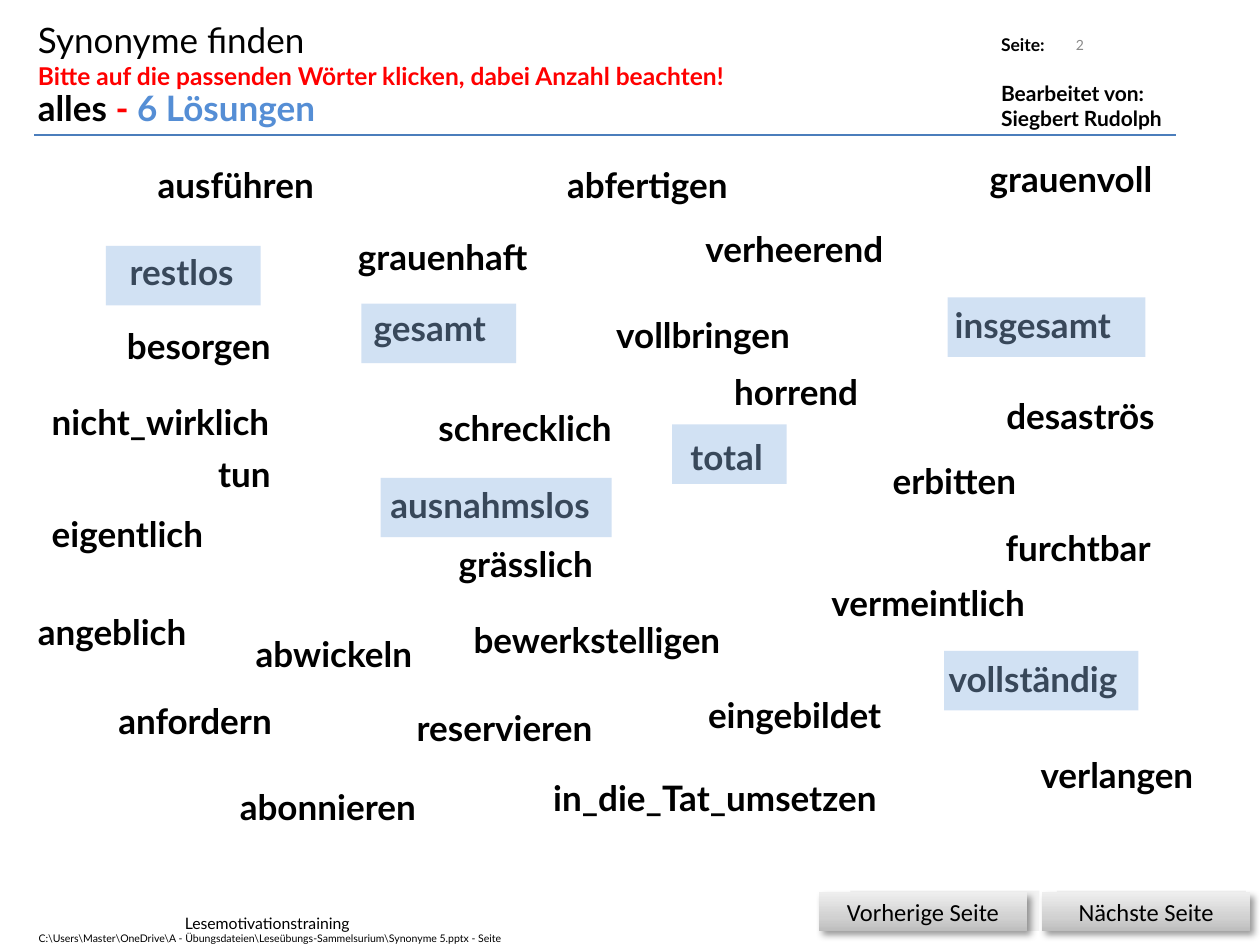
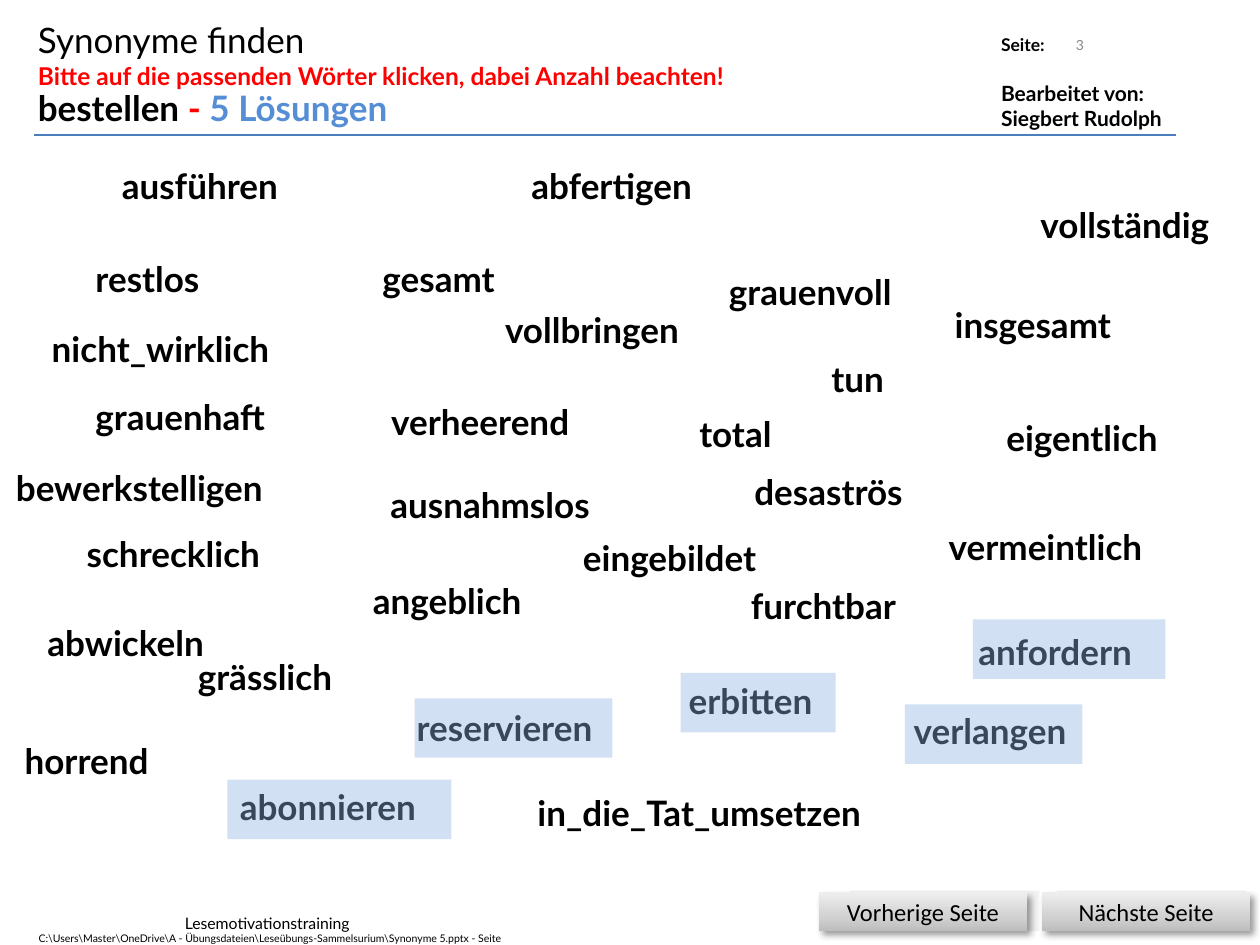
"""Builds two synonym exercise slides with their solution words highlighted."""
from dataclasses import dataclass

from lxml.etree import SubElement
from pptx import Presentation
from pptx.dml.color import RGBColor as RGB
from pptx.enum.shapes import MSO_CONNECTOR as CONN, MSO_SHAPE as SHAPE
from pptx.enum.text import MSO_ANCHOR as ANCHOR, MSO_AUTO_SIZE as FIT, PP_ALIGN as ALIGN
from pptx.oxml import parse_xml
from pptx.oxml.ns import nsdecls, qn
from pptx.util import Pt


@dataclass(frozen=True)
class Theme:
    font: str = "Lato"
    button_font: str = "Calibri"
    black: str = "000000"
    white: str = "FFFFFF"
    red: str = "FF0000"
    blue: str = "558ED5"
    rule: str = "4B7EBC"
    grey: str = "898989"
    plate: str = "F2F2F2"
    highlight: str = "8EB4E3"
    gradient: tuple = ((0, "BDBDBD"), (35, "D1D1D1"), (100, "EEEEEE"))
    word: int = 20
    hint: int = 14
    author: int = 12
    label: int = 10
    footer: int = 9
    number: int = 8
    file: int = 6


T = Theme()
WORD_H = 31.5
HIGHLIGHT_H = 34
FILE_NAME = r"C:\Users\Master\OneDrive\A - Übungsdateien\Leseübungs-Sammelsurium\Synonyme 5.pptx - Seite"
BUTTONS = [("Nächste Seite", 595.5, 604), ("Vorherige Seite", 468, 486)]

WIDTHS = {
    "insgesamt": 108, "total": 58, "vollständig": 116, "ausnahmslos": 132.5,
    "restlos": 78, "gesamt": 81, "verlangen": 107, "erbitten": 92,
    "abonnieren": 122, "reservieren": 125, "anfordern": 109, "grauenvoll": 113,
    "verheerend": 125, "furchtbar": 104, "horrend": 91, "schrecklich": 122,
    "grässlich": 96, "desaströs": 103, "grauenhaft": 117, "abfertigen": 112,
    "besorgen": 100, "vollbringen": 120, "tun": 46, "abwickeln": 109,
    "in_die_Tat_umsetzen": 218, "bewerkstelligen": 165, "ausführen": 109,
    "eigentlich": 108, "angeblich": 105, "eingebildet": 121,
    "vermeintlich": 135, "nicht_wirklich": 150,
}

EXERCISES = [
    {
        "page": 2, "keyword": "alles", "solutions": 6, "width": 183,
        "words": [
            ("insgesamt", 538.5, 170), ("total", 387.5, 245.5), ("vollständig", 535, 372),
            ("ausnahmslos", 216, 273), ("restlos", 67, 139.5), ("gesamt", 206.5, 171.5),
            ("verlangen", 587.5, 427), ("erbitten", 503, 259), ("abonnieren", 130, 445.5),
            ("reservieren", 231, 400), ("anfordern", 60.5, 396), ("grauenvoll", 558.5, 86.5),
            ("verheerend", 396, 126.5), ("furchtbar", 567.5, 297.5), ("horrend", 412.5, 208),
            ("schrecklich", 243.5, 229), ("grässlich", 255, 306.5), ("desaströs", 568, 222),
            ("grauenhaft", 197.5, 131), ("abfertigen", 317, 90), ("besorgen", 65.5, 182),
            ("vollbringen", 345, 175.5), ("tun", 117.5, 255), ("abwickeln", 139, 358),
            ("in_die_Tat_umsetzen", 309, 440), ("bewerkstelligen", 263.5, 350),
            ("ausführen", 83, 90), ("eigentlich", 22.5, 289.5), ("angeblich", 14.5, 345.5),
            ("eingebildet", 397.5, 392.5), ("vermeintlich", 468, 329),
            ("nicht_wirklich", 22.5, 225.5),
        ],
        "highlights": [(60.5, 140.5, 88.5), (206.5, 173.5, 88.5), (384, 242.5, 65.5),
                       (217.5, 273, 132), (541.5, 170, 113), (539.5, 372, 111)],
    },
    {
        "page": 3, "keyword": "bestellen", "solutions": 5, "width": 227,
        "words": [
            ("verlangen", 515, 402), ("erbitten", 386.5, 384.5), ("abonnieren", 130, 445.5),
            ("reservieren", 231, 400), ("anfordern", 552, 356.5), ("insgesamt", 538.5, 170),
            ("total", 392.5, 232), ("vollständig", 587.5, 113), ("ausnahmslos", 216, 273),
            ("restlos", 47.5, 143.5), ("gesamt", 211.5, 143.5), ("grauenvoll", 409.5, 151),
            ("verheerend", 216.5, 225.5), ("furchtbar", 422, 330.5), ("horrend", 7, 419),
            ("schrecklich", 42.5, 301), ("grässlich", 106, 371), ("desaströs", 424, 265.5),
            ("grauenhaft", 47.5, 222.5), ("abfertigen", 296.5, 90.5),
            ("vollbringen", 281.5, 173), ("tun", 468, 201), ("abwickeln", 20, 351.5),
            ("in_die_Tat_umsetzen", 300, 448.5), ("bewerkstelligen", 2, 263),
            ("ausführen", 62.5, 90.5), ("eigentlich", 568, 234.5), ("angeblich", 206, 327.5),
            ("eingebildet", 326, 303), ("vermeintlich", 535, 296.5),
            ("nicht_wirklich", 22.5, 183.5),
        ],
        "highlights": [(130, 445.5, 128), (237, 399, 113), (389, 384.5, 88.5),
                       (556, 354, 110), (517, 402.5, 101.5)],
    },
]


def add_run(p, text, size, color=T.black, bold=False, font=T.font):
    r = p.add_run()
    r.text = text
    r.font.name, r.font.size, r.font.bold = font, Pt(size), bold
    r.font.color.rgb = RGB.from_string(color)


def add_box(shapes, x, y, w, h, fill=None):
    if fill is None:
        sp = shapes.add_textbox(Pt(x), Pt(y), Pt(w), Pt(h))
        sp.text_frame.word_wrap = False
        sp.text_frame.auto_size = FIT.SHAPE_TO_FIT_TEXT
    else:
        sp = shapes.add_shape(SHAPE.RECTANGLE, Pt(x), Pt(y), Pt(w), Pt(h))
        sp.fill.solid()
        sp.fill.fore_color.rgb = RGB.from_string(fill)
        sp.line.fill.background()
        sp.shadow.inherit = False
    return sp


prs = Presentation()
prs.slide_width, prs.slide_height = Pt(720), Pt(540)

for ex in EXERCISES:
    s = prs.slides.add_slide(prs.slide_layouts[5])
    shapes = s.shapes

    title = shapes.title
    title.left, title.top, title.width, title.height = Pt(14.5), Pt(7), Pt(436), Pt(48.5)
    title.fill.solid()
    title.fill.fore_color.rgb = RGB.from_string(T.white)
    tf = title.text_frame
    tf.word_wrap, tf.auto_size, tf.vertical_anchor = False, FIT.SHAPE_TO_FIT_TEXT, ANCHOR.TOP
    add_run(tf.paragraphs[0], "Synonyme finden", T.word)
    add_run(tf.add_paragraph(), "Bitte auf die passenden Wörter klicken, dabei Anzahl beachten!",
            T.hint, T.red, True)
    for p in tf.paragraphs:
        p.alignment = ALIGN.LEFT

    p = add_box(shapes, 14.5, 46, ex["width"], WORD_H).text_frame.paragraphs[0]
    add_run(p, ex["keyword"] + " ", T.word, bold=True)
    add_run(p, "- ", T.word, T.red, True)
    add_run(p, f"{ex['solutions']} Lösungen", T.word, T.blue, True)

    tf = add_box(shapes, 565, 16, 114, 63.5).text_frame
    add_run(tf.paragraphs[0], "Seite:", T.label, bold=True)
    p = tf.add_paragraph()
    p.space_before = Pt(14.5)
    add_run(p, "Bearbeitet von:", T.author, bold=True)
    add_run(tf.add_paragraph(), "Siegbert Rudolph", T.author, bold=True)

    tf = add_box(shapes, 458.5, 11, 168, 29).text_frame
    tf.word_wrap, tf.auto_size, tf.vertical_anchor = True, FIT.NONE, ANCHOR.MIDDLE
    tf.paragraphs[0].alignment = ALIGN.RIGHT
    add_run(tf.paragraphs[0], str(ex["page"]), T.number, T.grey)

    rule = shapes.add_connector(CONN.STRAIGHT, Pt(19.5), Pt(77), Pt(672), Pt(77))
    rule.line.color.rgb = RGB.from_string(T.rule)
    rule.line.width = Pt(1)
    SubElement(rule._element.spPr, qn("a:effectLst"))

    for word, x, y in ex["words"]:
        sp = add_box(shapes, x, y, WIDTHS[word], WORD_H)
        add_run(sp.text_frame.paragraphs[0], word, T.word, bold=True)

    for x, y, w in ex["highlights"]:
        sp = add_box(shapes, x, y, w, HIGHLIGHT_H, T.highlight)
        color = sp._element.spPr.find(qn("a:solidFill")).find(qn("a:srgbClr"))
        SubElement(color, qn("a:alpha")).set("val", "40000")

    for label, x, plate_x in BUTTONS:
        add_box(shapes, plate_x, 509, 108, 23, T.plate)
        sp = shapes.add_shape(SHAPE.RECTANGLE, Pt(x), Pt(510), Pt(119), Pt(22))
        sp.line.fill.background()
        stops = "".join(f'<a:gs pos="{pos * 1000}"><a:srgbClr val="{c}"/></a:gs>'
                        for pos, c in T.gradient)
        spPr = sp._element.spPr
        spPr.insert(2, parse_xml(
            f'<a:gradFill {nsdecls("a")} rotWithShape="1"><a:gsLst>{stops}</a:gsLst>'
            '<a:lin ang="16200000" scaled="0"/></a:gradFill>'))
        spPr.append(parse_xml(
            f'<a:effectLst {nsdecls("a")}><a:outerShdw blurRad="{Pt(4)}" dist="{Pt(3)}" '
            f'dir="2700000" algn="tl" rotWithShape="0"><a:srgbClr val="{T.black}">'
            '<a:alpha val="40000"/></a:srgbClr></a:outerShdw></a:effectLst>'))
        tf = sp.text_frame
        tf.vertical_anchor = ANCHOR.MIDDLE
        tf.paragraphs[0].alignment = ALIGN.CENTER
        add_run(tf.paragraphs[0], label, T.hint, font=T.button_font)

    sp = add_box(shapes, 98.5, 518.5, 112, 18)
    add_run(sp.text_frame.paragraphs[0], "Lesemotivationstraining", T.footer)
    sp = add_box(shapes, 15, 529, 283, 14.5)
    add_run(sp.text_frame.paragraphs[0], FILE_NAME, T.file)

prs.save("out.pptx")
